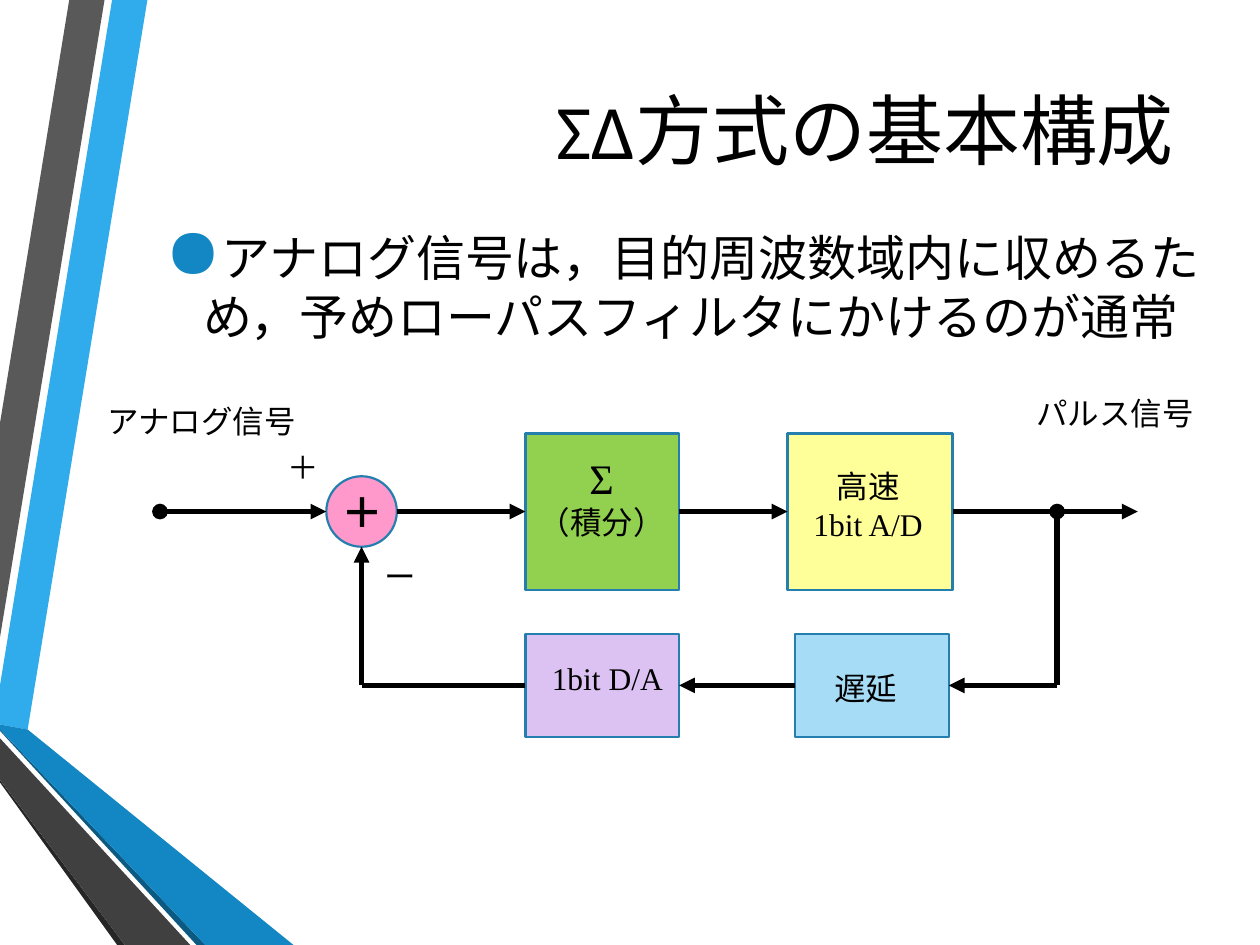
from collections import namedtuple

from lxml import etree
from pptx import Presentation
from pptx.dml.color import RGBColor
from pptx.enum.shapes import MSO_CONNECTOR, MSO_SHAPE
from pptx.enum.text import MSO_ANCHOR, PP_ALIGN
from pptx.oxml.ns import qn
from pptx.util import Inches, Pt

STRAIGHT = MSO_CONNECTOR.STRAIGHT
RECTANGLE, OVAL = MSO_SHAPE.RECTANGLE, MSO_SHAPE.OVAL
LEFT, CENTER, RIGHT = PP_ALIGN.LEFT, PP_ALIGN.CENTER, PP_ALIGN.RIGHT
TOP, MIDDLE = MSO_ANCHOR.TOP, MSO_ANCHOR.MIDDLE
SIDE_LEFT, SIDE_RIGHT = 1, 3

BLACK = RGBColor(0x00, 0x00, 0x00)
OUTLINE = RGBColor(0x24, 0x7F, 0xAF)
GREEN = RGBColor(0x92, 0xD0, 0x50)
YELLOW = RGBColor(0xFF, 0xFF, 0x99)
PALE_BLUE = RGBColor(0xA7, 0xDC, 0xF7)
LILAC = RGBColor(0xDB, 0xC2, 0xF3)
PINK = RGBColor(0xFF, 0x99, 0xCC)
ACCENT = RGBColor(0x12, 0x87, 0xC3)
SKY = RGBColor(0x30, 0xAC, 0xEC)
DEEP_BLUE = RGBColor(0x0C, 0x5A, 0x82)
GREY = RGBColor(0x59, 0x59, 0x59)
DARK_GREY = RGBColor(0x40, 0x40, 0x40)
NEAR_BLACK = RGBColor(0x26, 0x26, 0x26)

# The page is a grid of 100 columns by 75 rows of square cells.
CELL = Inches(0.1)
COLUMNS, ROWS = 100, 75
SERIF, SANS = "Times New Roman", "Calibri"

# Outlines in hundredths of a cell's tenfold: 1000 by 750 on the page.
BANDS = [
    (SKY, [(0, 544), (0, 575), (22, 579), (117, 0), (89, 0)]),
    (GREY, [(83, 0), (55, 0), (0, 336), (0, 506)]),
    (NEAR_BLACK, [(0, 619), (0, 621), (93, 750), (99, 750)]),
    (DEEP_BLUE, [(0, 579), (0, 580), (156, 750), (163, 750)]),
    (ACCENT, [(0, 579), (163, 750), (233, 750), (22, 579), (0, 575)]),
    (DARK_GREY, [(0, 619), (99, 750), (151, 750), (0, 586)]),
]


class Box(namedtuple("Box", "column row width height")):
    def spot(self, column, row):
        return round((self.column + column) * CELL), round((self.row + row) * CELL)

    def inner(self, column, row, width, height):
        return Box(self.column + column, self.row + row, width, height)

    def emu(self):
        return (*self.spot(0, 0), round(self.width * CELL), round(self.height * CELL))


def add_text(page, box, lines, font=SERIF, align=CENTER, anchor=TOP):
    """Add one paragraph for each (text, size) pair in lines."""
    frame = page.shapes.add_textbox(*box.emu()).text_frame
    frame.word_wrap = True
    frame.vertical_anchor = anchor
    for index, (text, size) in enumerate(lines):
        para = frame.add_paragraph() if index else frame.paragraphs[0]
        para.text = text
        para.alignment = align
        para.font.name = font
        para.font.size = Pt(size)
        para.font.color.rgb = BLACK
    return frame


def add_node(page, kind, box, color):
    node = page.shapes.add_shape(kind, *box.emu())
    node.shadow.inherit = False
    node.fill.solid()
    node.fill.fore_color.rgb = color
    node.line.color.rgb = OUTLINE
    node.line.width = Pt(1.25)
    return node


def add_wire(page, box, start, end, head=None, tail=None):
    """Join two ends, each a grid spot or a (shape, side) pair."""
    fixed = [box.spot(*e) if isinstance(e[0], (int, float)) else (0, 0)
             for e in (start, end)]
    wire = page.shapes.add_connector(STRAIGHT, *fixed[0], *fixed[1])
    for point, join in ((start, wire.begin_connect), (end, wire.end_connect)):
        if not isinstance(point[0], (int, float)):
            join(*point)
    wire.line.color.rgb = BLACK
    wire.line.width = Pt(3)
    line = wire.line._get_or_add_ln()
    for tag, form in (("a:headEnd", head), ("a:tailEnd", tail)):
        if form:
            etree.SubElement(line, qn(tag), type=form)
    etree.SubElement(wire._element.spPr, qn("a:effectLst"))


def draw_bands(page, box):
    for color, points in BANDS:
        builder = page.shapes.build_freeform(*points[0], scale=CELL / 10)
        builder.add_line_segments(points[1:], close=True)
        band = builder.convert_to_shape(*box.spot(0, 0))
        band.shadow.inherit = False
        band.fill.solid()
        band.fill.fore_color.rgb = color
        band.line.fill.background()


def draw_title(page, box):
    add_text(page, box, [("ΣΔ方式の基本構成", 44)], SANS, RIGHT, MIDDLE)


def draw_body(page, box):
    text = "アナログ信号は，目的周波数域内に収めるため，予めローパスフィルタにかけるのが通常"
    para = add_text(page, box, [(text, 28)], align=LEFT).paragraphs[0]
    para.space_after = Pt(6)
    props = para._p.get_or_add_pPr()
    props.set("marL", str(Inches(0.31)))
    props.set("indent", str(-Inches(0.31)))
    bullet_color = etree.Element(qn("a:buClr"))
    etree.SubElement(bullet_color, qn("a:srgbClr"), val=str(ACCENT))
    bullet_size = etree.Element(qn("a:buSzPct"), val="145000")
    bullet = etree.Element(qn("a:buChar"), char="●")
    defaults = props.find(qn("a:defRPr"))
    for part in (bullet_color, bullet_size, bullet):
        defaults.addprevious(part)


def draw_diagram(page, box):
    forward, feedback = 10.6, 24.4
    adder_x, tap_x = 22.7, 77.9

    def block(column, axis, width, height, color):
        place = box.inner(column, axis - height / 2, width, height)
        return add_node(page, RECTANGLE, place, color)

    integrator = block(35.7, forward, 12.2, 12.4, GREEN)
    converter = block(56.5, forward, 13.1, 12.4, YELLOW)
    delay = block(57.1, feedback, 12.2, 8.2, PALE_BLUE)
    feedback_dac = block(35.7, feedback, 12.2, 8.2, LILAC)
    radius = 2.8
    adder = box.inner(adder_x - radius, forward - radius, 2 * radius, 2 * radius)
    add_node(page, OVAL, adder, PINK)

    wires = [
        ((6.7, forward), (adder_x - radius, forward), "oval", "triangle"),
        ((adder_x + radius, forward), (integrator, SIDE_LEFT), None, "triangle"),
        ((integrator, SIDE_RIGHT), (converter, SIDE_LEFT), None, "triangle"),
        ((converter, SIDE_RIGHT), (84.3, forward), None, "triangle"),
        ((tap_x, forward), (tap_x, feedback), "oval", None),
        ((tap_x, feedback), (delay, SIDE_RIGHT), None, "triangle"),
        ((delay, SIDE_LEFT), (feedback_dac, SIDE_RIGHT), None, "triangle"),
        ((feedback_dac, SIDE_LEFT), (adder_x, feedback), None, None),
        ((adder_x, feedback), (adder_x, forward + radius), None, "triangle"),
    ]
    for wire in wires:
        add_wire(page, box, *wire)

    labels = [
        ((35.5, 5.4, 12.5, 8.1), [("Σ", 24), ("（積分）", 18)]),
        ((56.5, 6.6, 12.8, 7.1), [("高速", 18), ("1bit A/D", 18)]),
        ((56.3, 22.6, 12.8, 4), [("遅延", 18)]),
        ((35.8, 21.8, 12.8, 4), [("1bit D/A", 18)]),
        ((0.6, 1.4, 18.8, 4), [("アナログ信号", 18)]),
        ((73.1, 0.8, 18.8, 4), [("パルス信号", 18)]),
        ((22.4, 13.7, 6.8, 4), [("ー", 18)]),
        ((14.7, 5.1, 6.8, 4), [("＋", 18)]),
    ]
    for place, lines in labels:
        add_text(page, box.inner(*place), lines)
    sign = add_text(page, box.inner(20.1, 8.1, 5.1, 5), [("＋", 24)])
    sign.paragraphs[0].font.bold = True


def main():
    deck = Presentation()
    deck.slide_width, deck.slide_height = COLUMNS * CELL, ROWS * CELL
    page = deck.slides.add_slide(deck.slide_layouts[6])
    draw_bands(page, Box(0, 0, 23.3, ROWS))
    draw_title(page, Box(9.2, 4.6, 85, 11.2))
    draw_body(page, Box(12.1, 17.6, 85.8, 11.8))
    draw_diagram(page, Box(6, 30, 92, 29))
    deck.save("out.pptx")


if __name__ == "__main__":
    main()
